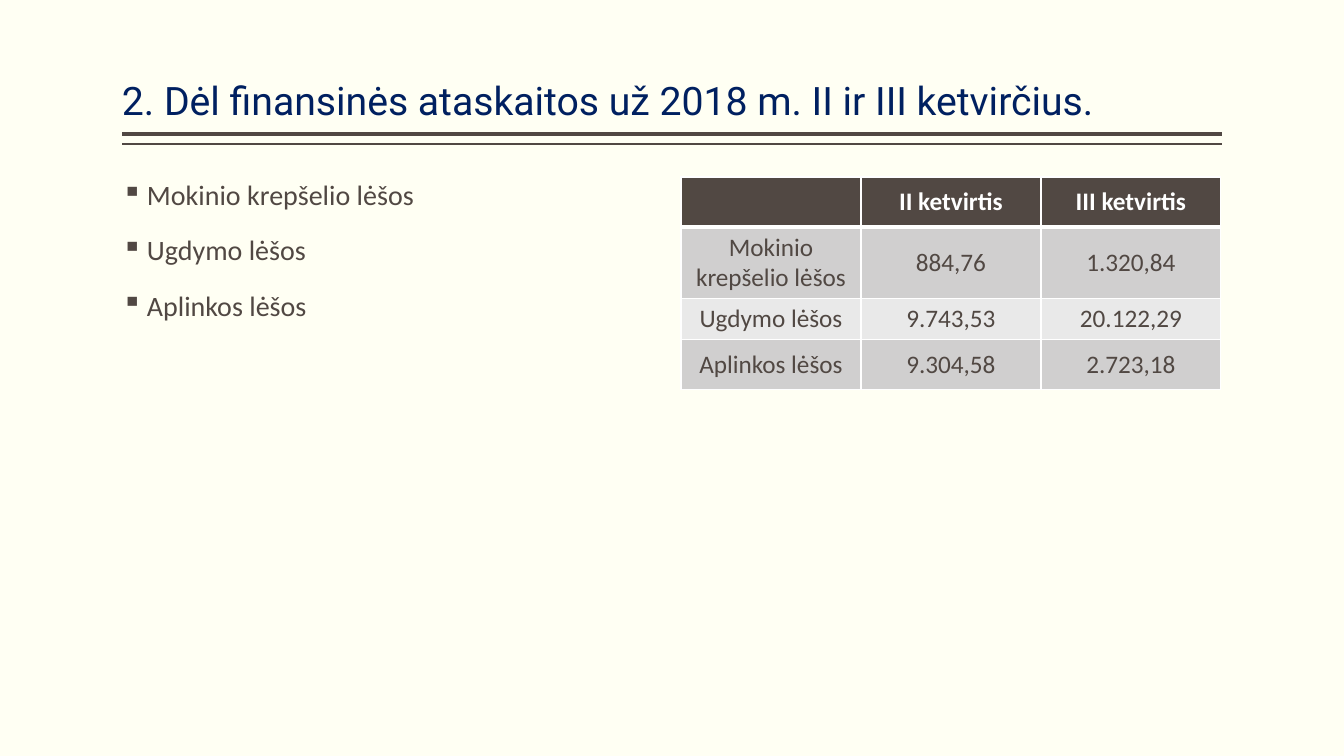
from lxml import etree
from pptx import Presentation
from pptx import util as u
from pptx.dml.color import RGBColor
from pptx.enum import text
from pptx.oxml.ns import qn

PX = 914400 / 100.8  # EMU in one pixel
BROWN, NAVY, WHITE, CREAM = "514843", "002060", "FFFFFF", "FFFFF3"
BANDS = ["D0CFCF", "E9E9E9"]
LEFT, RIGHT = 122, 1222

FUNDS = ["Mokinio krepšelio lėšos", "Ugdymo lėšos", "Aplinkos lėšos"]
ROWS = [
    ["", "II ketvirtis", "III ketvirtis"],
    [FUNDS[0], "884,76", "1.320,84"],
    [FUNDS[1], "9.743,53", "20.122,29"],
    [FUNDS[2], "9.304,58", "2.723,18"],
]
HEIGHTS = [50, 71, 41, 50]
COL = 180


def px(n):
    return u.Emu(round(n * PX))


def rgb(code):
    return RGBColor.from_string(code)


def put(obj, **form):
    for name, val in form.items():
        setattr(obj, name, val)


def sub(node, tag, **attrs):
    return etree.SubElement(node, qn(tag), attrs)


def style(para, words, size, color, face="Calibri", bold=False):
    para.text = words
    put(para.font, size=u.Pt(size), name=face, bold=bold)
    para.font.color.rgb = rgb(color)
    for run in para.runs:
        put(run.font, size=u.Pt(size), name=face, bold=bold)
        run.font.color.rgb = rgb(color)


def inset(frame, anchor):
    put(frame, word_wrap=True, auto_size=text.MSO_AUTO_SIZE.NONE,
        margin_left=0, margin_right=0, margin_top=px(5),
        margin_bottom=px(5), vertical_anchor=anchor)


def rule(slide, y, width):
    line = slide.shapes.add_connector(1, px(RIGHT), px(y), px(LEFT), px(y))
    line.line.color.rgb = rgb(BROWN)
    line.line.width = u.Pt(width)
    sub(line._element.spPr, "a:effectLst")


def title(slide, words):
    head = slide.shapes.title
    put(head, left=px(LEFT), top=px(8), width=px(RIGHT - LEFT),
        height=px(121))
    inset(head.text_frame, text.MSO_ANCHOR.BOTTOM)
    para = head.text_frame.paragraphs[0]
    style(para, words, 28, NAVY, "Roboto")
    put(para, alignment=text.PP_ALIGN.LEFT, line_spacing=0.9)


def bullets(slide, items):
    box = slide.shapes.add_textbox(px(LEFT), px(176), px(542), px(504))
    frame = box.text_frame
    inset(frame, text.MSO_ANCHOR.TOP)
    for i, item in enumerate(items):
        para = frame.add_paragraph() if i else frame.paragraphs[0]
        style(para, item, 20, BROWN)
        put(para, line_spacing=0.9, space_before=u.Pt(18))
        props = para._p.get_or_add_pPr()
        props.set("marL", str(px(25)))
        props.set("indent", str(-px(25)))
        mark = etree.Element(qn("a:buChar"), char="▪")
        props.find(qn("a:spcBef")).addnext(mark)


def edges(cell, **widths):
    props = cell._tc.get_or_add_tcPr()
    for side in "LRTB":
        line = sub(props, "a:ln" + side, w=str(u.Pt(widths.get(side, 1))))
        sub(sub(line, "a:solidFill"), "a:srgbClr", val=WHITE)


def table(slide, rows):
    shape = slide.shapes.add_table(len(rows), len(rows[0]), px(681), px(177),
                                   px(COL * len(rows[0])), px(sum(HEIGHTS)))
    grid = shape.table
    for col in grid.columns:
        col.width = px(COL)
    for r, row in enumerate(rows):
        grid.rows[r].height = px(HEIGHTS[r])
        for c, words in enumerate(row):
            cell = grid.cell(r, c)
            # Thick line between the header and the body
            edges(cell, T=3 if r == 1 else 1, B=1 if r else 3)
            cell.fill.solid()
            cell.fill.fore_color.rgb = rgb(BANDS[(r - 1) % 2] if r else BROWN)
            cell.vertical_anchor = text.MSO_ANCHOR.MIDDLE
            para = cell.text_frame.paragraphs[0]
            style(para, words, 18, BROWN if r else WHITE, bold=r == 0)
            para.alignment = text.PP_ALIGN.CENTER


def main():
    prs = Presentation()
    put(prs, slide_width=px(1344), slide_height=px(756))
    slide = prs.slides.add_slide(prs.slide_layouts[5])
    slide.background.fill.solid()
    slide.background.fill.fore_color.rgb = rgb(CREAM)

    # Heading with its double rule
    rule(slide, 134, 3)
    rule(slide, 144, 1)
    title(slide, "2. Dėl finansinės ataskaitos už 2018 m. II ir III ketvirčius.")

    # Funds and their quarterly sums
    bullets(slide, FUNDS)
    table(slide, ROWS)
    prs.save("out.pptx")


if __name__ == "__main__":
    main()
